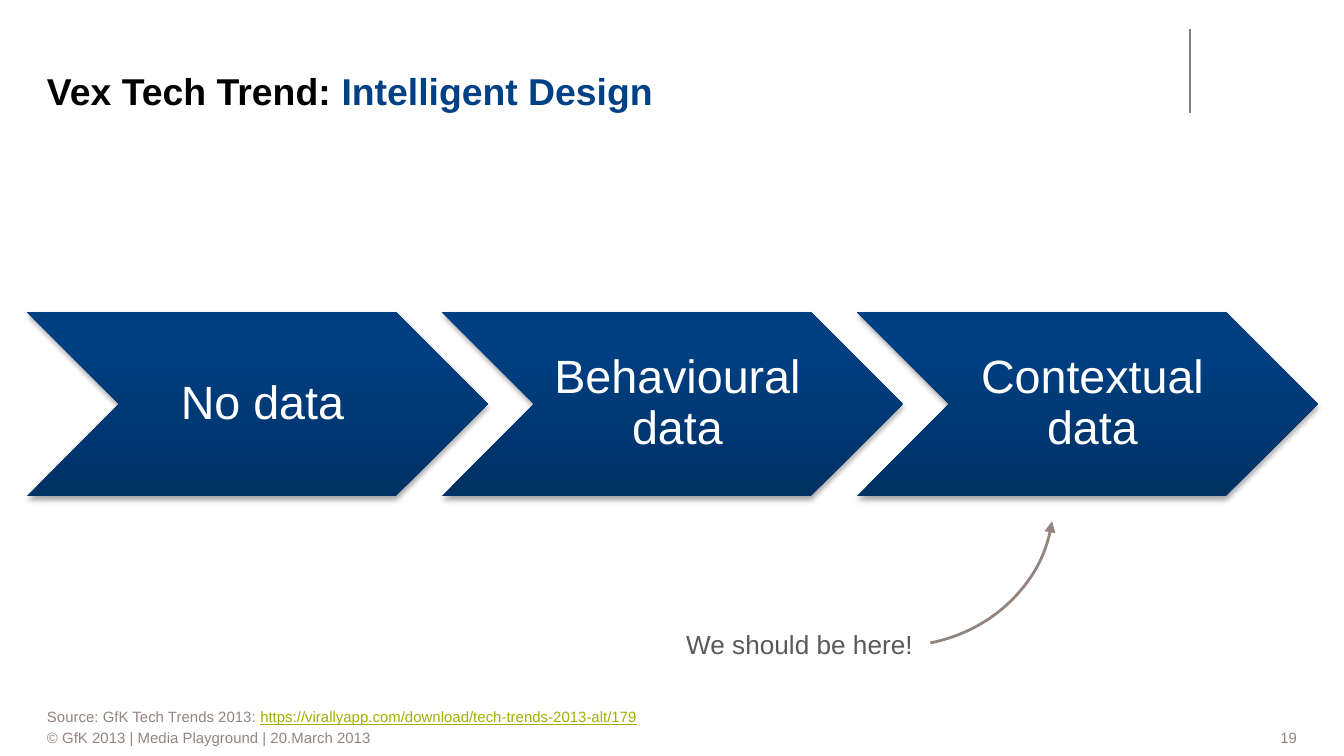
"""Build the slide showing three data stages and the stage to aim for."""
import lxml.etree
import pptx
import pptx.dml.color
import pptx.enum.dml
import pptx.enum.shapes
import pptx.enum.text
import pptx.oxml
import pptx.oxml.ns
import pptx.util

PX = 914400 / 134.4
RGB = pptx.dml.color.RGBColor.from_string
SHAPE = pptx.enum.shapes.MSO_SHAPE
ALIGN = pptx.enum.text.PP_ALIGN
ANCHOR = pptx.enum.text.MSO_ANCHOR
qn = pptx.oxml.ns.qn

THEME = {
    "font": "Arial",
    "title": 20, "stage": 25, "note": 14, "footer": 8,
    "black": "000000", "white": "FFFFFF", "blue": "004186",
    "dark": "003164", "navy": "003F82", "text": "595959",
    "taupe": "928580", "link": "A1AF00", "rule": "808080",
}


def px(*values):
    return [pptx.util.Emu(round(v * PX)) for v in values]


def write(sp, runs, size, align=ALIGN.LEFT, anchor=ANCHOR.MIDDLE, insets=(0, 0, 0, 0)):
    tf = sp.text_frame
    tf.word_wrap = True
    tf.vertical_anchor = anchor
    tf.margin_left, tf.margin_top, tf.margin_right, tf.margin_bottom = px(*insets)
    p = tf.paragraphs[0]
    p.alignment = align
    for text, color in runs:
        r = p.add_run()
        r.text = text
        r.font.name = THEME["font"]
        r.font.size = pptx.util.Pt(THEME[size])
        r.font.bold = size == "title"
        r.font.underline = color == "link"
        r.font.color.rgb = RGB(THEME[color])
    return p


prs = pptx.Presentation()
prs.slide_width, prs.slide_height = px(1344, 756)
s = prs.slides.add_slide(prs.slide_layouts[6])

footers = [
    (1106, 727, 191, ALIGN.RIGHT, [("19", "taupe")]),
    (47, 727, 1038, ALIGN.LEFT, [("© GfK 2013 | Media Playground | 20.March 2013", "taupe")]),
    (47, 706, 1038, ALIGN.LEFT, [
        ("Source: GfK Tech Trends 2013: ", "taupe"),
        ("https://virallyapp.com/download/tech-trends-2013-alt/179", "link"),
    ]),
]
for x, y, w, align, runs in footers:
    sp = s.shapes.add_shape(SHAPE.RECTANGLE, *px(x, y, w, 22))
    sp.shadow.inherit = False
    sp.fill.solid()
    sp.fill.fore_color.rgb = RGB(THEME["white"])
    sp.line.fill.background()
    write(sp, runs, "footer", align)

rule = s.shapes.add_connector(pptx.enum.shapes.MSO_CONNECTOR.STRAIGHT, *px(1190, 29, 1190, 113))
rule.line.color.rgb = RGB(THEME["rule"])
rule.line.width = pptx.util.Pt(0.75)
lxml.etree.SubElement(rule._element.spPr, qn("a:effectLst"))

for i, stage in enumerate(["No data", "Behavioural data", "Contextual data"]):
    sp = s.shapes.add_shape(SHAPE.CHEVRON, *px(27 + 415 * i, 312, 461, 184))
    sp.line.fill.background()
    sp.fill.gradient()
    sp.fill.gradient_angle = 90
    for stop, position, color in zip(sp.fill.gradient_stops, (0, 0.8), ("dark", "navy")):
        stop.position = position
        stop.color.rgb = RGB(THEME[color])
    sp.shadow.inherit = False
    effects = sp._element.spPr.find(qn("a:effectLst"))
    shadow = lxml.etree.SubElement(
        effects, qn("a:outerShdw"), blurRad="39370", dist="22860", dir="5400000", rotWithShape="0")
    tint = lxml.etree.SubElement(shadow, qn("a:srgbClr"), val=THEME["black"])
    lxml.etree.SubElement(tint, qn("a:alpha"), val="35000")
    p = write(sp, [(stage, "white")], "stage", ALIGN.CENTER, insets=(15, 5, 5, 5))
    p.line_spacing = 0.9

note = s.shapes.add_textbox(*px(450, 621, 463, 47))
write(note, [("We should be here!", "text")], "note", ALIGN.RIGHT)

arc = s.shapes.add_shape(SHAPE.ARC, *px(732, 348, 322, 298))
arc.adjustments[0] = 175.82
arc.adjustments[1] = 0
arc.rotation = 8.7
arc._element.spPr.find(qn("a:xfrm")).set("flipV", "1")
arc.shadow.inherit = False
arc.fill.background()
arc.line.color.rgb = RGB(THEME["taupe"])
arc.line.width = pptx.util.Pt(1.5)
lxml.etree.SubElement(arc.line._get_or_add_ln(), qn("a:tailEnd"), type="triangle")

title = s.shapes.add_textbox(*px(47, 28, 942, 85))
write(title, [("Vex Tech Trend: ", "black"), ("Intelligent Design", "blue")], "title",
      anchor=ANCHOR.BOTTOM)

prs.save("out.pptx")
